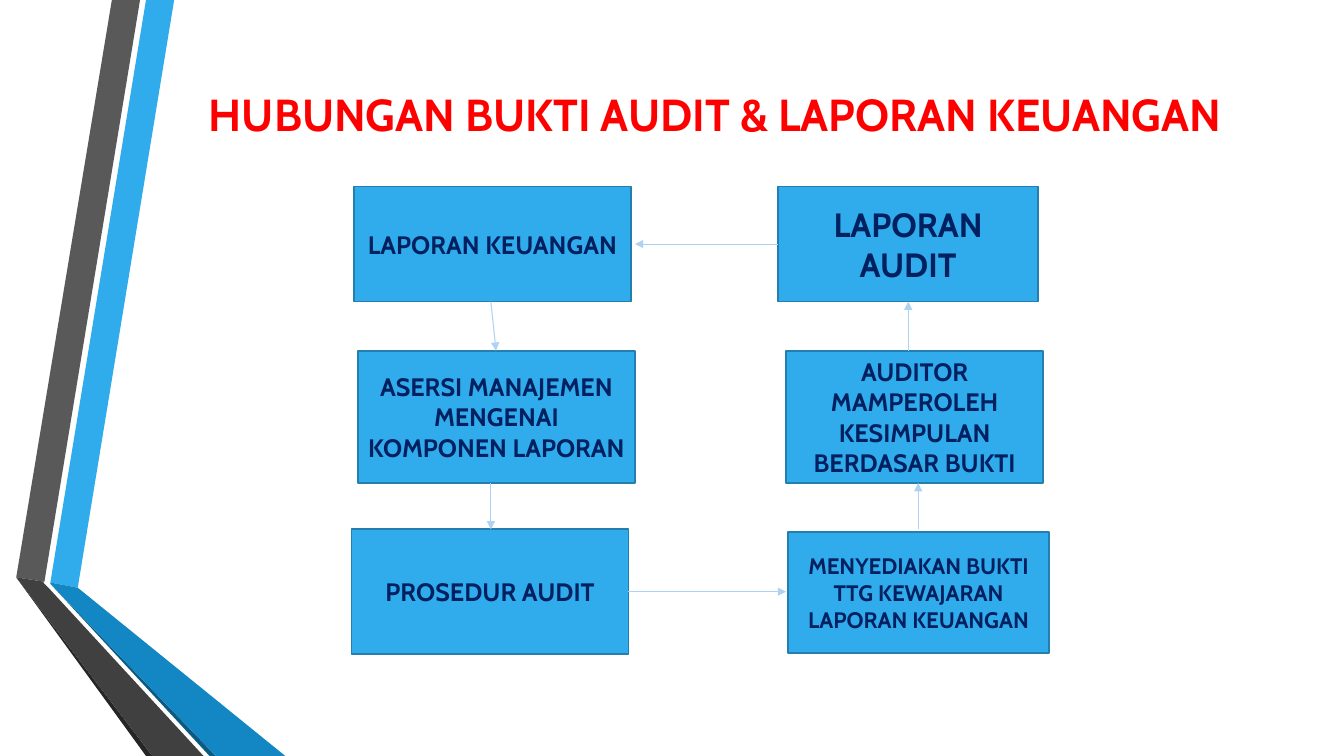
from dataclasses import dataclass

from lxml import etree
from pptx import Presentation, util as u
from pptx.dml.color import RGBColor
from pptx.enum import shapes, text
from pptx.oxml import ns


@dataclass(frozen=True)
class Theme:
    font: str = "Cabin"
    title: str = "FF0000"
    ink: str = "002060"
    box: str = "30ACEC"
    border: str = "247FAF"
    arrow: str = "AED2F4"
    ribbon_blue: str = "30ACEC"
    ribbon_grey: str = "595959"
    edge_black: str = "262626"
    edge_navy: str = "0C5A82"
    fold_blue: str = "1287C3"
    fold_grey: str = "404040"
    title_size: int = 32
    large: int = 24
    body: int = 18
    small: int = 16


class SlideBuilder:
    def __init__(self, page, theme):
        self.page = page
        self.theme = theme

    def label(self, shape, words, size, color):
        frame = shape.text_frame
        frame.word_wrap = True
        frame.vertical_anchor = text.MSO_ANCHOR.MIDDLE
        para = frame.paragraphs[0]
        para.text = words
        para.alignment = text.PP_ALIGN.CENTER
        para.font.name = self.theme.font
        para.font.size = u.Pt(size)
        para.font.bold = True
        para.font.color.rgb = RGBColor.from_string(color)

    def title(self, words, *place):
        box = self.page.shapes.add_textbox(*map(u.Cm, place))
        self.label(box, words, self.theme.title_size, self.theme.title)

    def box(self, words, size, *place):
        box = self.page.shapes.add_shape(shapes.MSO_SHAPE.RECTANGLE, *map(u.Cm, place))
        box.shadow.inherit = False
        box.fill.solid()
        box.fill.fore_color.rgb = RGBColor.from_string(self.theme.box)
        box.line.color.rgb = RGBColor.from_string(self.theme.border)
        box.line.width = u.Pt(1.25)
        self.label(box, words, size, self.theme.ink)

    def arrow(self, *ends):
        arrow = self.page.shapes.add_connector(
            shapes.MSO_CONNECTOR.STRAIGHT, *map(u.Cm, ends))
        arrow.line.color.rgb = RGBColor.from_string(self.theme.arrow)
        arrow.line.width = u.Pt(0.75)
        properties = arrow._element.spPr
        outline = properties.find(ns.qn("a:ln"))
        etree.SubElement(outline, ns.qn("a:tailEnd"), type="triangle")
        etree.SubElement(properties, ns.qn("a:effectLst"))

    def ribbon(self, color, *points):
        start, *rest = [(u.Cm(x), u.Cm(y)) for x, y in points]
        builder = self.page.shapes.build_freeform(*start)
        builder.add_line_segments(rest, close=True)
        ribbon = builder.convert_to_shape()
        ribbon.shadow.inherit = False
        ribbon.fill.solid()
        ribbon.fill.fore_color.rgb = RGBColor.from_string(color)
        ribbon.line.fill.background()


def main():
    deck = Presentation()
    deck.slide_width, deck.slide_height = u.Cm(33.87), u.Cm(19.05)
    theme = Theme()
    slide = SlideBuilder(deck.slides.add_slide(deck.slide_layouts[6]), theme)

    # Folded ribbons on the left edge
    bottom = 19.05
    ribbons = [
        (theme.ribbon_blue, (1.27, 14.68), (1.96, 14.81), (4.39, 0), (3.68, 0)),
        (theme.ribbon_grey, (3.53, 0), (2.82, 0), (0.41, 14.55), (1.12, 14.66)),
        (theme.edge_black, (0.41, 14.55), (3.68, bottom), (3.84, bottom)),
        (theme.edge_navy, (1.27, 14.71), (5.28, bottom), (5.44, bottom)),
        (theme.fold_blue, (1.27, 14.68), (1.27, 14.71), (5.44, bottom),
         (7.19, bottom), (1.96, 14.81)),
        (theme.fold_grey, (5.13, bottom), (1.22, 14.81), (1.09, 14.68),
         (1.12, 14.66), (0.41, 14.55), (3.84, bottom)),
    ]
    for color, *points in ribbons:
        slide.ribbon(color, *points)

    # Heading
    slide.title("HUBUNGAN BUKTI AUDIT & LAPORAN KEUANGAN", 4.11, 1.9, 27.84, 1.93)

    # Process boxes: left column, then right column
    top, middle = (4.7, 2.9), (8.84, 3.33)  # top edge and height of shared rows
    boxes = [
        ("LAPORAN KEUANGAN", theme.body, 8.92, 6.98, top),
        ("ASERSI MANAJEMEN MENGENAI KOMPONEN LAPORAN", theme.body, 9.02, 6.98, middle),
        ("PROSEDUR AUDIT", theme.body, 8.86, 6.98, (13.34, 3.15)),
        ("LAPORAN AUDIT", theme.large, 19.61, 6.55, top),
        ("AUDITOR MAMPEROLEH KESIMPULAN BERDASAR BUKTI", theme.body,
         19.81, 6.48, middle),
        ("MENYEDIAKAN BUKTI TTG KEWAJARAN LAPORAN KEUANGAN", theme.small,
         19.86, 6.58, (13.41, 3.05)),
    ]
    for words, size, left, width, (row_top, height) in boxes:
        slide.box(words, size, left, row_top, width, height)

    # Arrows: down the left, across, up the right and back
    arrows = [
        (12.37, 7.6, 12.5, 8.84),
        (12.37, 12.17, 12.37, 13.34),
        (15.82, 14.91, 19.81, 14.91),
        (23.14, 13.34, 23.14, 12.17),
        (22.89, 8.84, 22.89, 7.6),
        (19.61, 6.15, 16, 6.15),
    ]
    for ends in arrows:
        slide.arrow(*ends)

    deck.save("out.pptx")


if __name__ == "__main__":
    main()
